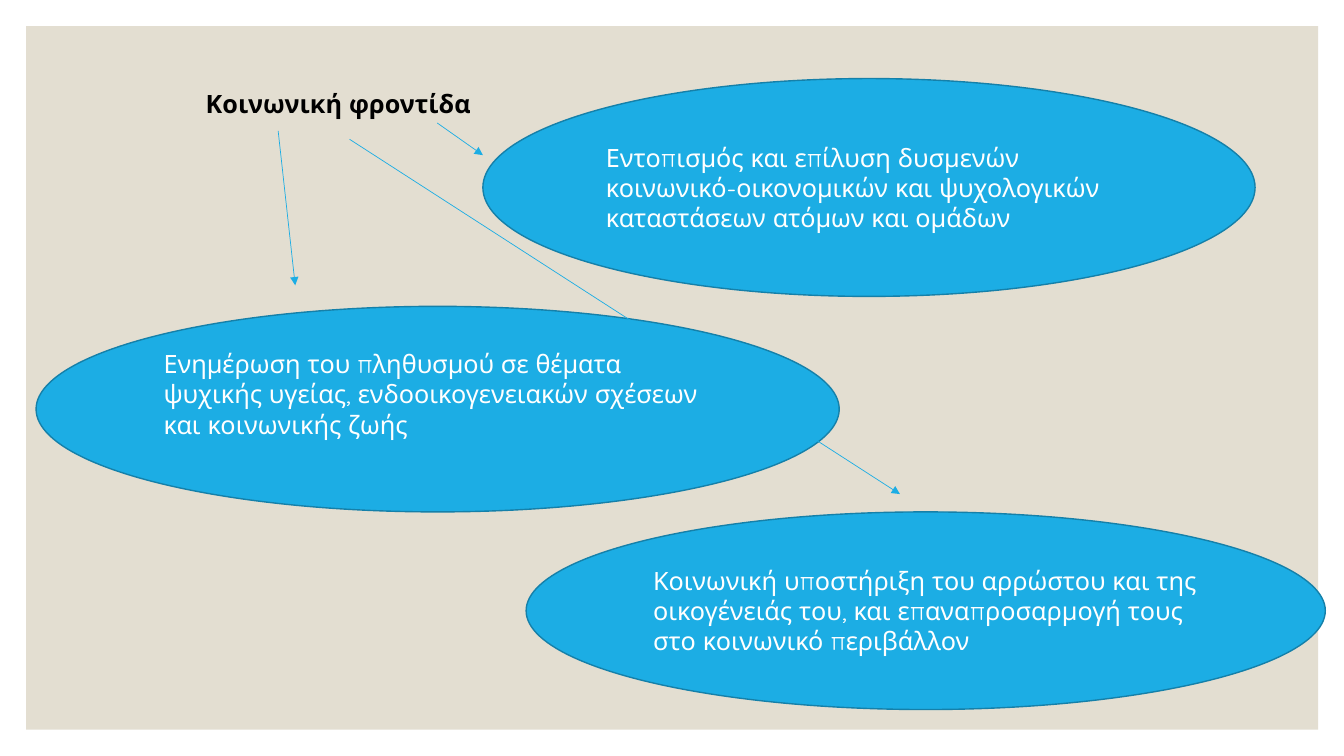
from typing import NamedTuple

from lxml import etree
from pptx import Presentation
from pptx.dml.color import RGBColor
from pptx.enum.shapes import MSO_CONNECTOR, MSO_SHAPE
from pptx.enum.text import MSO_ANCHOR, MSO_AUTO_SIZE, PP_ALIGN
from pptx.oxml.ns import qn
from pptx.shapes.autoshape import Shape
from pptx.slide import Slide
from pptx.util import Cm, Pt

OVAL = MSO_SHAPE.OVAL
RECT = MSO_SHAPE.RECTANGLE
LINE = MSO_CONNECTOR.STRAIGHT
MIDDLE = MSO_ANCHOR.MIDDLE
FIXED = MSO_AUTO_SIZE.NONE
LEFT = PP_ALIGN.LEFT

FONT = "Quicksand"
COLORS = {
    "panel": "E3DED1",
    "oval": "1CADE4",
    "edge": "1580A9",
    "title": "000000",
    "text": "FFFFFF",
}


class Box(NamedTuple):
    left: float
    top: float
    width: float
    height: float


class Task(NamedTuple):
    box: Box
    text: str
    foot: float = 0.13


class Arrow(NamedTuple):
    x1: float
    y1: float
    x2: float
    y2: float


PANEL = Box(0.66, 0.66, 32.56, 17.73)
TITLE = Box(4.93, 2.03, 8.1, 1.17)
TASKS = [
    Task(
        Box(12.17, 1.98, 19.46, 5.49),
        "Εντοπισμός και επίλυση δυσμενών κοινωνικό-οικονομικών "
        "και ψυχολογικών καταστάσεων ατόμων και ομάδων",
    ),
    Task(
        Box(0.91, 7.72, 20.24, 5.18),
        "Ενημέρωση του πληθυσμού σε θέματα ψυχικής υγείας, "
        "ενδοοικογενειακών σχέσεων και κοινωνικής ζωής",
        foot=0.9,
    ),
    Task(
        Box(13.26, 12.9, 20.14, 4.98),
        "Κοινωνική υποστήριξη του αρρώστου και της οικογένειάς του, "
        "και επαναπροσαρμογή τους στο κοινωνικό περιβάλλον",
    ),
]
ARROWS = [
    Arrow(11.02, 3.1, 12.17, 3.91),
    Arrow(7.01, 3.3, 7.44, 7.19),
    Arrow(8.81, 3.51, 22.68, 12.45),
]


def color(name: str) -> RGBColor:
    return RGBColor.from_string(COLORS[name])


def write(shape: Shape, text: str, *, tint: str, bold: bool = False,
          foot: float = 0.13) -> None:
    frame = shape.text_frame
    frame.word_wrap = True
    frame.auto_size = FIXED
    frame.vertical_anchor = MIDDLE
    frame.margin_bottom = Cm(foot)
    line = frame.paragraphs[0]
    line.alignment = LEFT
    run = line.add_run()
    run.text = text
    run.font.name = FONT
    run.font.size = Pt(18)
    run.font.bold = bold
    run.font.color.rgb = color(tint)


def draw_shape(slide: Slide, kind: MSO_SHAPE, box: Box, fill: str) -> Shape:
    shape = slide.shapes.add_shape(kind, *map(Cm, box))
    shape.shadow.inherit = False
    shape.fill.solid()
    shape.fill.fore_color.rgb = color(fill)
    shape.line.fill.background()
    return shape


def draw_title(slide: Slide) -> None:
    title = slide.shapes.title
    title.left, title.top, title.width, title.height = map(Cm, TITLE)
    write(title, "Κοινωνική φροντίδα", tint="title", bold=True)
    panel = draw_shape(slide, RECT, PANEL, "panel")
    title.element.addprevious(panel.element)


def draw_task(slide: Slide, task: Task) -> None:
    oval = draw_shape(slide, OVAL, task.box, "oval")
    oval.line.color.rgb = color("edge")
    oval.line.width = Pt(1)
    write(oval, task.text, tint="text", foot=task.foot)


def draw_arrow(slide: Slide, arrow: Arrow) -> None:
    link = slide.shapes.add_connector(LINE, *map(Cm, arrow))
    link.line.color.rgb = color("oval")
    link.line.width = Pt(0.5)
    etree.SubElement(link.line._get_or_add_ln(), qn("a:tailEnd"), type="triangle")
    etree.SubElement(link.element.spPr, qn("a:effectLst"))


def main() -> None:
    deck = Presentation()
    deck.slide_width, deck.slide_height = Cm(33.87), Cm(19.05)
    slide = deck.slides.add_slide(deck.slide_layouts.get_by_name("Title Only"))
    draw_title(slide)
    for task in TASKS:
        draw_task(slide, task)
    for arrow in ARROWS:
        draw_arrow(slide, arrow)
    deck.save("out.pptx")


if __name__ == "__main__":
    main()
